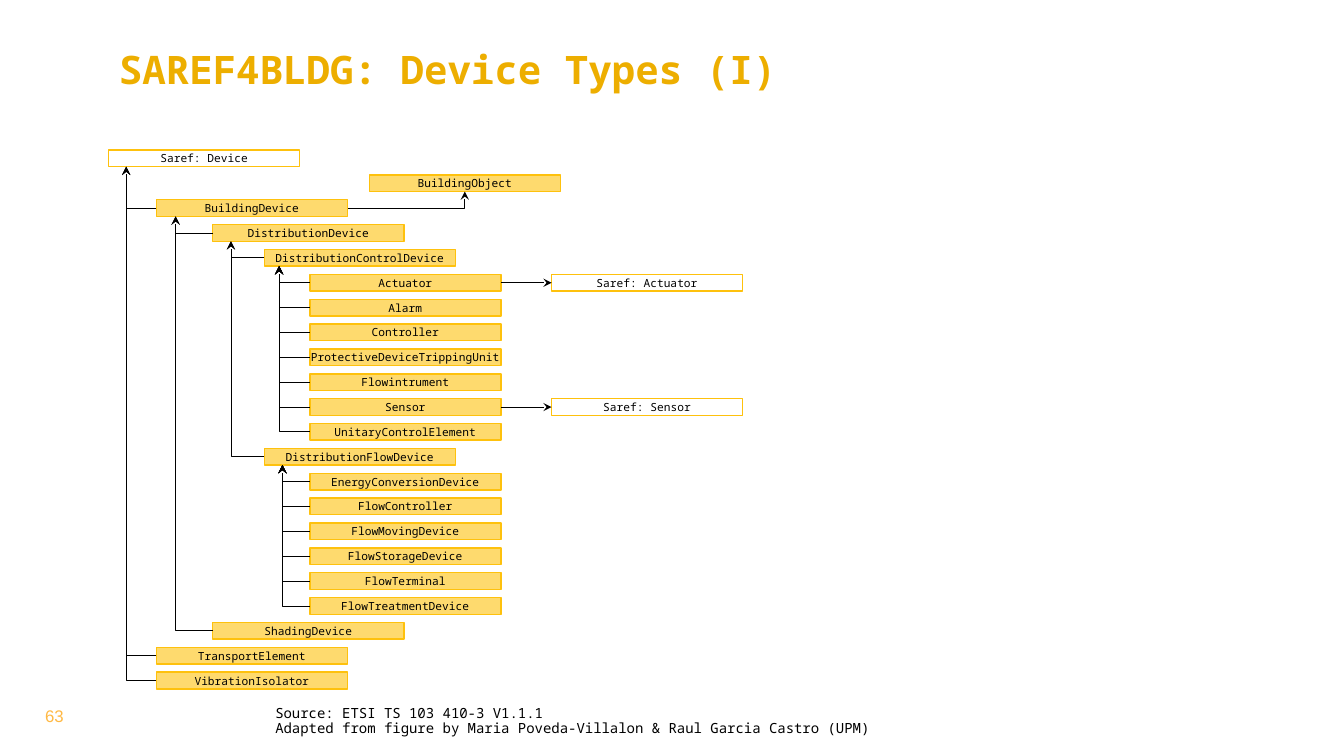
from lxml import etree
from pptx import Presentation
from pptx.dml.color import RGBColor
from pptx.enum import shapes, text
from pptx.oxml import ns
from pptx.util import Pt

GOLD = RGBColor(0xED, 0xAE, 0x00)
AMBER = RGBColor(0xFE, 0xC1, 0x0D)
PALE_AMBER = RGBColor(0xFE, 0xDA, 0x6E)
PAGE_ORANGE = RGBColor(0xFF, 0xB9, 0x44)
BLACK = RGBColor(0, 0, 0)
MONO = "Noto Sans Mono"

BOX_WIDTH, BOX_HEIGHT = 136.5, 11.9
FIRST_ROW, ROW_PITCH = 107.2, 17.76
LEVEL_LEFTS = [77.6, 111.7, 152, 188.8, 221.3]
BUILDING_OBJECT_LEFT, SAREF_LEFT = 263.8, 394

HIERARCHY = [
    ("Saref: Device", 0, 0),
    ("BuildingDevice", 1, 2),
    ("DistributionDevice", 2, 3),
    ("DistributionControlDevice", 3, 4),
    ("Actuator", 4, 5),
    ("Alarm", 4, 6),
    ("Controller", 4, 7),
    ("ProtectiveDeviceTrippingUnit", 4, 8),
    ("Flowintrument", 4, 9),
    ("Sensor", 4, 10),
    ("UnitaryControlElement", 4, 11),
    ("DistributionFlowDevice", 3, 12),
    ("EnergyConversionDevice", 4, 13),
    ("FlowController", 4, 14),
    ("FlowMovingDevice", 4, 15),
    ("FlowStorageDevice", 4, 16),
    ("FlowTerminal", 4, 17),
    ("FlowTreatmentDevice", 4, 18),
    ("ShadingDevice", 2, 19),
    ("TransportElement", 1, 20),
    ("VibrationIsolator", 1, 21),
]
TRUNKS = {
    "Saref: Device": 90.2,
    "BuildingDevice": 125.5,
    "DistributionDevice": 165,
    "DistributionControlDevice": 199.4,
    "DistributionFlowDevice": 201.8,
}
SAREF_TWINS = {"Actuator": "Saref: Actuator", "Sensor": "Saref: Sensor"}


def row_top(row):
    return FIRST_ROW + row * ROW_PITCH


def row_middle(row):
    return row_top(row) + BOX_HEIGHT / 2


def style(paragraph, size, color, font=MONO, bold=False):
    paragraph.font.name = font
    paragraph.font.size = Pt(size)
    paragraph.font.bold = bold
    paragraph.font.color.rgb = color


def clear_margins(frame):
    frame.margin_left = frame.margin_right = Pt(0)
    frame.margin_top = frame.margin_bottom = Pt(0)


def add_label(slide, left, top, width, height, lines, anchor):
    frame = slide.shapes.add_textbox(Pt(left), Pt(top), Pt(width), Pt(height)).text_frame
    frame.word_wrap = True
    frame.vertical_anchor = anchor
    frame.text = "\n".join(lines)
    return frame


def add_class(slide, name, left, row, filled=True):
    box = slide.shapes.add_shape(shapes.MSO_SHAPE.RECTANGLE, Pt(left), Pt(row_top(row)),
                                 Pt(BOX_WIDTH), Pt(BOX_HEIGHT))
    box.shadow.inherit = False
    if filled:
        box.fill.solid()
        box.fill.fore_color.rgb = PALE_AMBER
    else:
        box.fill.background()
    box.line.color.rgb = AMBER
    box.line.width = Pt(1)
    frame = box.text_frame
    clear_margins(frame)
    frame.word_wrap = True
    frame.vertical_anchor = text.MSO_ANCHOR.MIDDLE
    frame.text = name
    frame.paragraphs[0].alignment = text.PP_ALIGN.CENTER
    style(frame.paragraphs[0], 8, BLACK)


def add_arrow(slide, start, end):
    bent = start[1] != end[1]
    kind = shapes.MSO_CONNECTOR.ELBOW if bent else shapes.MSO_CONNECTOR.STRAIGHT
    arrow = slide.shapes.add_connector(kind, *map(Pt, start + end))
    arrow.line.color.rgb = BLACK
    arrow.line.width = Pt(0.5)
    properties = arrow._element.spPr
    if bent:
        properties.find(ns.qn("a:prstGeom")).set("prst", "bentConnector2")
    etree.SubElement(properties.find(ns.qn("a:ln")), ns.qn("a:tailEnd"), type="stealth")
    etree.SubElement(properties, ns.qn("a:effectLst"))


def add_hierarchy(slide):
    parents = {}
    for name, level, row in HIERARCHY:
        left = LEVEL_LEFTS[level]
        add_class(slide, name, left, row, filled=level > 0)
        if level:
            add_arrow(slide, (left, row_middle(row)), parents[level - 1])
        if name in TRUNKS:
            parents[level] = (TRUNKS[name], row_top(row) + BOX_HEIGHT)
        if name in SAREF_TWINS:
            add_class(slide, SAREF_TWINS[name], SAREF_LEFT, row, filled=False)
            add_arrow(slide, (left + BOX_WIDTH, row_middle(row)), (SAREF_LEFT, row_middle(row)))


def add_building_object(slide):
    add_class(slide, "BuildingObject", BUILDING_OBJECT_LEFT, 1)
    add_arrow(slide, (LEVEL_LEFTS[1] + BOX_WIDTH, row_middle(2)),
              (BUILDING_OBJECT_LEFT + BOX_WIDTH / 2, row_top(1) + BOX_HEIGHT))


def main():
    deck = Presentation()
    deck.slide_width, deck.slide_height = Pt(960), Pt(540)
    slide = deck.slides.add_slide(deck.slide_layouts[6])

    title = add_label(slide, 77.8, 28.8, 718.6, 64.8, ["SAREF4BLDG: Device Types (I)"],
                      text.MSO_ANCHOR.TOP)
    style(title.paragraphs[0], 28, GOLD, bold=True)

    add_building_object(slide)
    add_hierarchy(slide)

    page = add_label(slide, 0, 483, 77.8, 57, ["63"], text.MSO_ANCHOR.MIDDLE)
    page.paragraphs[0].alignment = text.PP_ALIGN.CENTER
    style(page.paragraphs[0], 12, PAGE_ORANGE, font="Arial")

    source = add_label(slide, 196.6, 504.7, 602, 21.6, [
        "Source: ETSI TS 103 410-3 V1.1.1",
        "Adapted from figure by Maria Poveda-Villalon & Raul Garcia Castro (UPM)",
    ], text.MSO_ANCHOR.BOTTOM)
    clear_margins(source)
    for line in source.paragraphs:
        line.line_spacing = 0.9
        style(line, 10, BLACK)

    deck.save("out.pptx")


if __name__ == "__main__":
    main()
